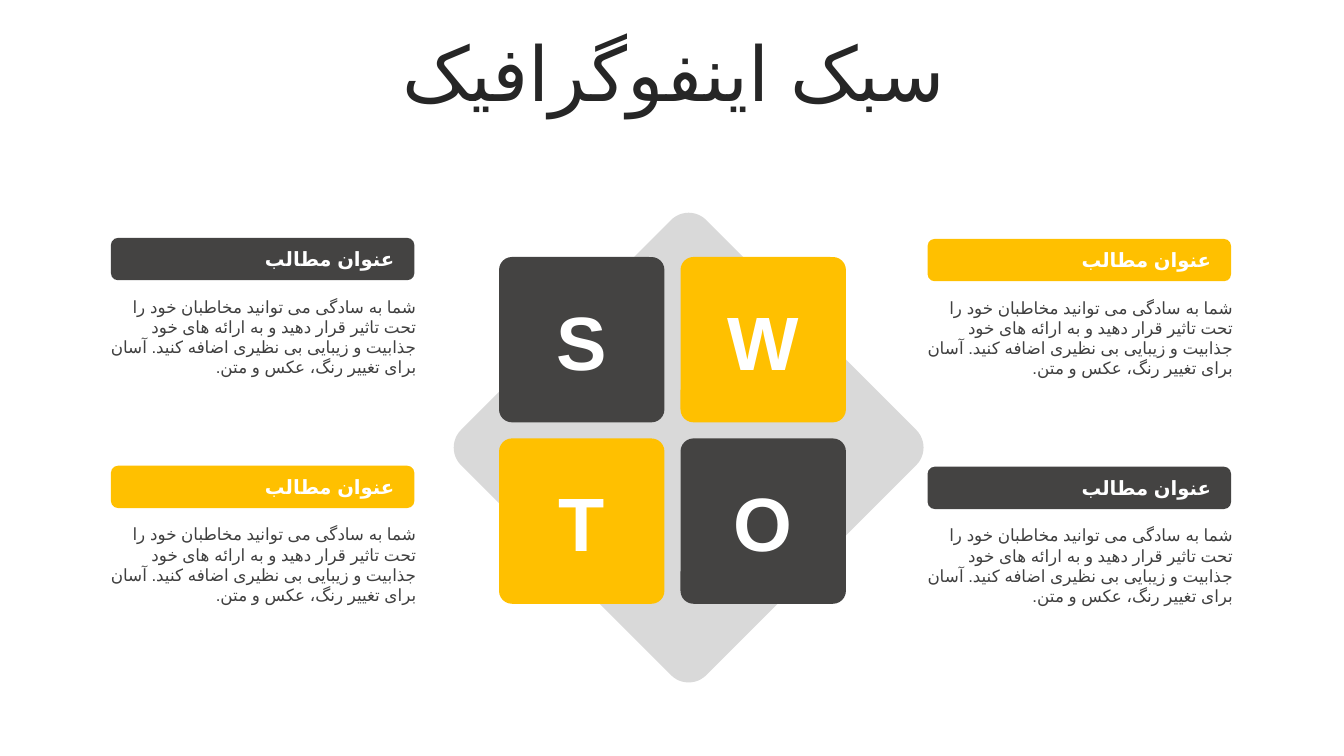
from lxml.etree import SubElement
from pptx import Presentation
from pptx.dml.color import RGBColor
from pptx.enum.lang import MSO_LANGUAGE_ID
from pptx.enum.shapes import MSO_SHAPE
from pptx.enum.text import MSO_ANCHOR, MSO_AUTO_SIZE, PP_ALIGN
from pptx.oxml.ns import qn
from pptx.util import Inches, Pt

YELLOW = RGBColor(0xFF, 0xC0, 0x00)
CHARCOAL = RGBColor(0x44, 0x43, 0x42)
PALE_GREY = RGBColor(0xD9, 0xD9, 0xD9)
TITLE_COLOR = RGBColor(0x26, 0x26, 0x26)
BODY_COLOR = RGBColor(0x40, 0x40, 0x40)
WHITE = RGBColor(0xFF, 0xFF, 0xFF)

HEADING = "عنوان مطالب"
BODY = ("شما به سادگی می توانید مخاطبان خود را تحت تاثیر قرار دهید و به ارائه های خود "
        "جذابیت و زیبایی بی نظیری اضافه کنید. آسان برای تغییر رنگ، عکس و متن.")

deck = Presentation()
deck.slide_width, deck.slide_height = Inches(13.33), Inches(7.5)
page = deck.slides.add_slide(deck.slide_layouts[5])


def add_block(left, top, width, height, color, rounding):
    block = page.shapes.add_shape(MSO_SHAPE.ROUNDED_RECTANGLE, Inches(left), Inches(top),
                                  Inches(width), Inches(height))
    block.adjustments[0] = rounding
    block.fill.solid()
    block.fill.fore_color.rgb = color
    block.line.fill.background()
    block.shadow.inherit = False
    return block


def write(box, text, size, color, align, bold=False, rtl=True):
    box.text_frame.word_wrap = True
    para = box.text_frame.paragraphs[0]
    para.text = text
    para.alignment = align
    font = para.font
    font.name, font.size, font.bold = "Arial", Pt(size), bold
    font.color.rgb = color
    # Persian text needs its own direction, typeface and language
    if rtl:
        properties = para._p.get_or_add_pPr()
        properties.set("rtl", "1")
        SubElement(properties.find(qn("a:defRPr")), qn("a:cs"), typeface="Arial")
        para.runs[0].font.language_id = MSO_LANGUAGE_ID.FARSI
    return para


# Title
title = page.shapes.title
title.left, title.top = Inches(0.35), Inches(0.37)
title.width, title.height = Inches(12.66), Inches(0.79)
title.text_frame.auto_size = MSO_AUTO_SIZE.NONE
title.text_frame.vertical_anchor = MSO_ANCHOR.MIDDLE
heading = write(title, "سبک اینفوگرافیک", 54, TITLE_COLOR, PP_ALIGN.CENTER)
heading.line_spacing = 0.9
heading.space_before = Pt(10)

# Diamond behind the squares
diamond = add_block(5.11, 2.72, 3.44, 3.44, PALE_GREY, 0.072)
diamond.rotation = 315

# Four lettered squares, colours alternating
for index, letter in enumerate("SWTO"):
    row, column = divmod(index, 2)
    left, top = 4.95 + 1.8 * column, 2.55 + 1.8 * row
    color = YELLOW if (row + column) % 2 else CHARCOAL
    add_block(left, top, 1.64, 1.64, color, 0.078)
    box = page.shapes.add_textbox(Inches(left), Inches(top + 0.37), Inches(1.64), Inches(0.91))
    frame = box.text_frame
    frame.margin_left = frame.margin_right = frame.margin_top = frame.margin_bottom = 0
    frame.vertical_anchor = MSO_ANCHOR.MIDDLE
    write(box, letter, 54, WHITE, PP_ALIGN.CENTER, bold=True, rtl=False)

# Heading bar and description beside each square
for column, (left, first_top) in enumerate([(1.1, 2.36), (9.2, 2.37)]):
    for row in range(2):
        top = first_top + 2.26 * row
        color = YELLOW if (row + column) % 2 else CHARCOAL
        add_block(left, top, 3.01, 0.42, color, 0.167)
        body = page.shapes.add_textbox(Inches(left - 0.13), Inches(top + 0.53),
                                       Inches(3.26), Inches(0.71))
        write(body, BODY, 12, BODY_COLOR, PP_ALIGN.RIGHT)
        label = page.shapes.add_textbox(Inches(left + 0.09), Inches(top + 0.04),
                                        Inches(2.82), Inches(0.34))
        write(label, HEADING, 14, WHITE, PP_ALIGN.RIGHT, bold=True)

deck.save("out.pptx")
